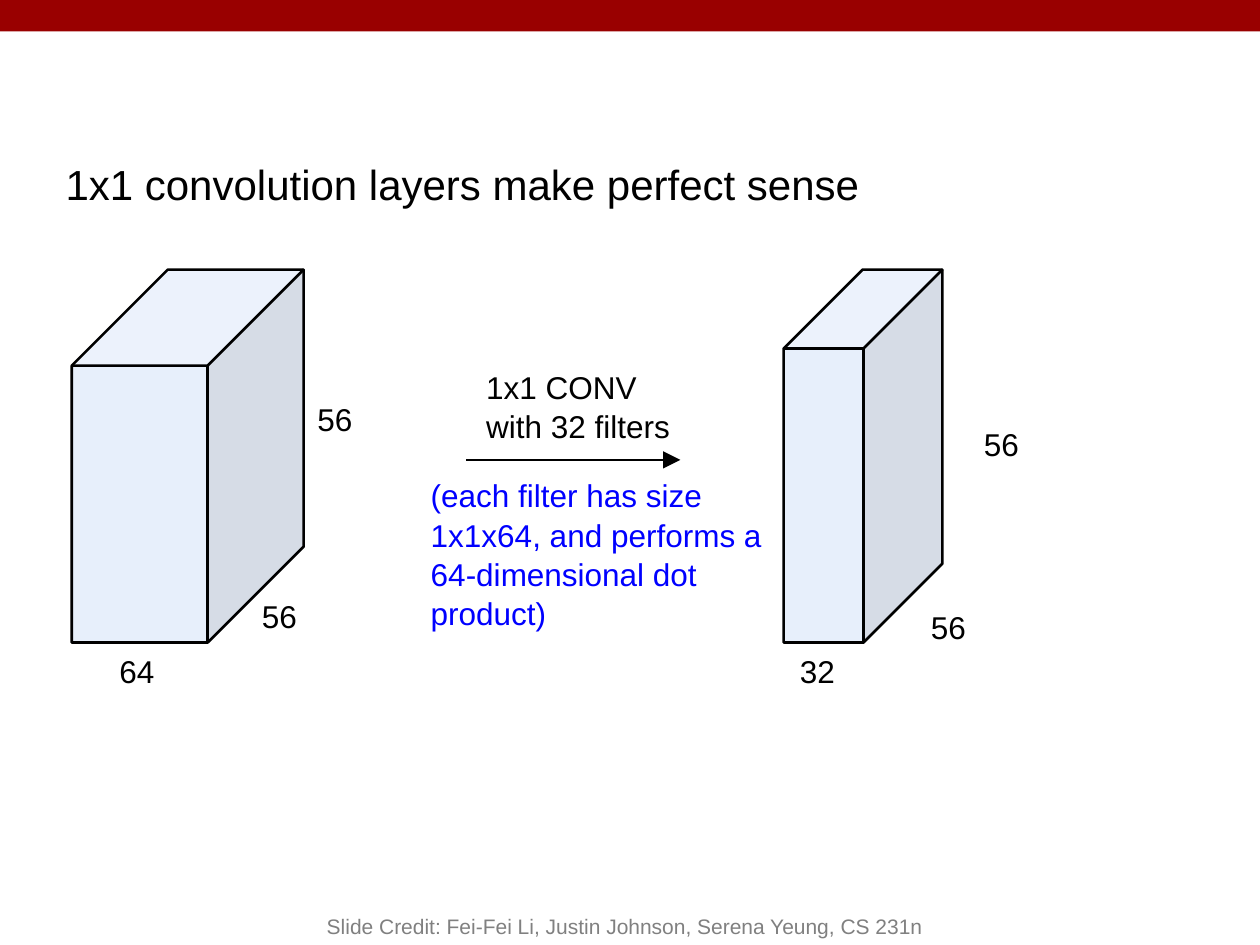
from lxml.etree import SubElement
from pptx import Presentation
from pptx.dml.color import RGBColor
from pptx.enum.shapes import MSO_CONNECTOR, MSO_SHAPE
from pptx.enum.text import MSO_ANCHOR, PP_ALIGN
from pptx.oxml.ns import qn
from pptx.util import Inches, Pt

COLORS = {"bar": "990000", "text": "000000", "note": "0000FF",
          "cube": "C9DAF8", "credit": "808080"}
LABEL = (0.53, 0.38)


def color(name):
    return RGBColor.from_string(COLORS[name])


def place(shape, box):
    for key, val in zip(("left", "top", "width", "height"), box):
        setattr(shape, key, Inches(val))


def write(shape, lines, size=18, tone="text", align=PP_ALIGN.LEFT,
          anchor=MSO_ANCHOR.TOP, pad=0.1, space=1.04):
    frame = shape.text_frame
    form = {"word_wrap": True, "vertical_anchor": anchor}
    form.update({"margin_" + side: Inches(pad)
                 for side in ("left", "top", "right", "bottom")})
    for key, val in form.items():
        setattr(frame, key, val)
    frame.text = "\n".join(lines)
    for para in frame.paragraphs:
        para.alignment = align
        para.line_spacing = space
        for key, val in {"name": "Arial", "size": Pt(size), "bold": False}.items():
            setattr(para.runs[0].font, key, val)
        para.runs[0].font.color.rgb = color(tone)


def add_text(slide, box, lines, **form):
    shape = slide.shapes.add_textbox(0, 0, 0, 0)
    place(shape, box)
    write(shape, lines, **form)


def add_header(slide, box):
    """Top bar, with the title below it."""
    x, y, w, h = box
    bar = slide.shapes.add_shape(MSO_SHAPE.RECTANGLE, 0, 0, 0, 0)
    place(bar, (x, y, w, h))
    bar.shadow.inherit = False
    bar.fill.solid()
    bar.fill.fore_color.rgb = color("bar")
    bar.line.fill.background()
    title = slide.shapes.title
    place(title, (x + 0.42, y + 1.14, 9.3, 1.04))
    write(title, ["1x1 convolution layers make perfect sense"], size=24)


def add_volume(slide, box, depth, labels):
    """Cube with its size labels, each offset from the cube's corner."""
    x, y, w, h = box
    cube = slide.shapes.add_shape(MSO_SHAPE.CUBE, 0, 0, 0, 0)
    place(cube, box)
    cube.adjustments[0] = depth
    cube.shadow.inherit = False
    cube.fill.solid()
    cube.fill.fore_color.rgb = color("cube")
    tint = cube.fill._xPr.find(qn("a:solidFill"))[0]
    SubElement(tint, qn("a:alpha"), val="43000")
    cube.line.color.rgb = color("text")
    cube.line.width = Pt(1.5)
    for text, dx, dy in labels:
        add_text(slide, (x + dx, y + dy, *LABEL), [text])


def add_step(slide, box):
    """Arrow with the operation above it and the note below."""
    x, y, w, h = box
    add_text(slide, (x + 0.44, y, 1.95, 0.47), ["1x1 CONV", "with 32 filters"])
    mid = Inches(y + 0.84)
    arrow = slide.shapes.add_connector(
        MSO_CONNECTOR.STRAIGHT, Inches(x + 0.38), mid, Inches(x + 2.08), mid)
    arrow.line.color.rgb = color("text")
    arrow.line.width = Pt(0.75)
    SubElement(arrow.line._get_or_add_ln(), qn("a:tailEnd"),
               type="triangle", w="lg", len="lg")
    SubElement(arrow._element.spPr, qn("a:effectLst"))
    add_text(slide, (x, y + 0.86, w, h - 0.86),
             ["(each filter has size 1x1x64, and performs a "
              "64-dimensional dot product)"], tone="note")


def add_credit(slide, box):
    add_text(slide, box,
             ["Slide Credit: Fei-Fei Li, Justin Johnson, Serena Yeung, CS 231n"],
             size=12, tone="credit", align=PP_ALIGN.CENTER,
             anchor=MSO_ANCHOR.BOTTOM, pad=0.05, space=1.0)


def main():
    deck = Presentation()
    deck.slide_width, deck.slide_height = Inches(10), Inches(7.5)
    slide = deck.slides.add_slide(deck.slide_layouts[5])
    add_header(slide, (0, 0, 10, 0.25))
    # Input volume, convolution, output volume
    add_volume(slide, (0.57, 2.14, 1.84, 2.96), 0.414,
               [("64", 0.28, 2.92), ("56", 1.41, 2.49), ("56", 1.85, 0.92)])
    add_step(slide, (3.32, 2.81, 3.12, 1.53))
    add_volume(slide, (6.22, 2.14, 1.26, 2.96), 0.497,
               [("32", 0.03, 2.92), ("56", 1.07, 2.57), ("56", 1.49, 1.12)])
    add_credit(slide, (2, 7, 5.92, 0.5))
    deck.save("out.pptx")


if __name__ == "__main__":
    main()
